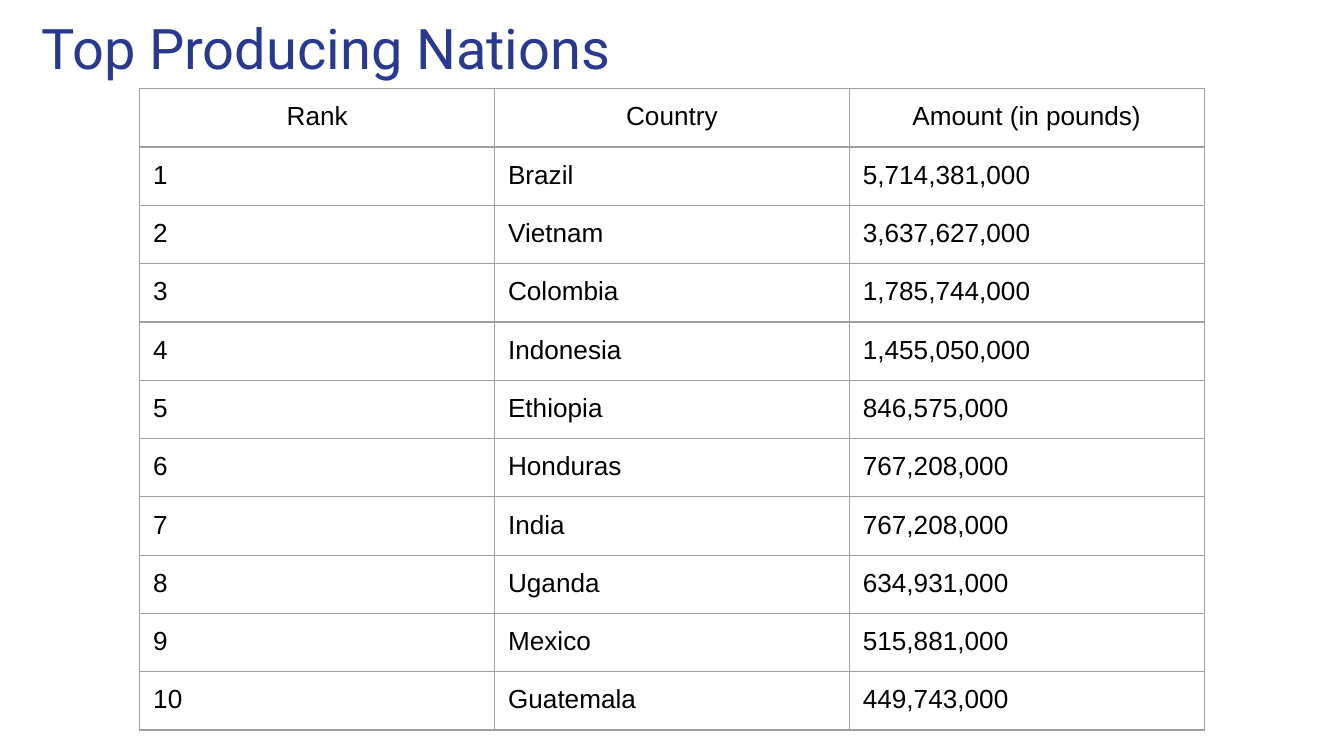
from lxml import etree
from pptx import Presentation, util as u
from pptx.dml.color import RGBColor
from pptx.enum import text
from pptx.oxml.ns import qn

COLORS = {"title": "2A3990", "body": "000000", "border": "9E9E9E"}
HEADERS = ("Rank", "Country", "Amount (in pounds)")
PRODUCERS = (
    ("Brazil", "5,714,381,000"),
    ("Vietnam", "3,637,627,000"),
    ("Colombia", "1,785,744,000"),
    ("Indonesia", "1,455,050,000"),
    ("Ethiopia", "846,575,000"),
    ("Honduras", "767,208,000"),
    ("India", "767,208,000"),
    ("Uganda", "634,931,000"),
    ("Mexico", "515,881,000"),
    ("Guatemala", "449,743,000"),
)


def write_text(holder, words, *, size, font, color, align=text.PP_ALIGN.LEFT):
    """Write one formatted paragraph with even margins into a cell or text frame."""
    holder.margin_left = holder.margin_right = u.Inches(0.1)
    holder.margin_top = holder.margin_bottom = u.Inches(0.1)
    holder.vertical_anchor = text.MSO_ANCHOR.TOP
    frame = getattr(holder, "text_frame", holder)
    paragraph = frame.paragraphs[0]
    paragraph.alignment = align
    run = paragraph.add_run()
    run.text = words
    run.font.size = u.Pt(size)
    run.font.name = font
    run.font.bold = False
    run.font.color.rgb = RGBColor.from_string(COLORS[color])


def add_title(slide, words):
    """Add the slide title."""
    box = slide.shapes.add_textbox(u.Inches(0.21), 0, u.Inches(9.32), u.Inches(0.66))
    box.text_frame.word_wrap = True
    write_text(box.text_frame, words, size=30, font="Roboto", color="title")


def outline_cell(cell):
    """Draw a thin border on all four sides of a cell."""
    properties = cell._tc.get_or_add_tcPr()
    for side in ("lnL", "lnR", "lnT", "lnB"):
        line = etree.SubElement(properties, qn(f"a:{side}"), w=str(u.Pt(0.75)))
        fill = etree.SubElement(line, qn("a:solidFill"))
        etree.SubElement(fill, qn("a:srgbClr"), val=COLORS["border"])


def add_grid(slide, rows):
    """Add a plain bordered table whose first row is centred."""
    side = u.Inches(3.28)
    frame = slide.shapes.add_table(
        len(rows), len(rows[0]), u.Inches(1.04), u.Inches(0.66), side, side
    )
    table = frame.table
    table.first_row = table.horz_banding = False
    for column in table.columns:
        column.width = u.Inches(2.64)
    for row in table.rows:
        row.height = u.Inches(5 / 12)
    frame.width = frame.height = side
    for row_index, row in enumerate(rows):
        align = text.PP_ALIGN.LEFT if row_index else text.PP_ALIGN.CENTER
        for column_index, words in enumerate(row):
            cell = table.cell(row_index, column_index)
            write_text(cell, words, size=14, font="Arial", color="body", align=align)
            outline_cell(cell)
            cell.fill.background()


def main():
    """Build and save the slide."""
    presentation = Presentation()
    presentation.slide_width = u.Inches(10)
    presentation.slide_height = u.Inches(10 * 9 / 16)
    slide = presentation.slides.add_slide(presentation.slide_layouts[6])
    add_title(slide, "Top Producing Nations")
    ranked = [(str(rank), *row) for rank, row in enumerate(PRODUCERS, 1)]
    add_grid(slide, [HEADERS, *ranked])
    presentation.save("out.pptx")


if __name__ == "__main__":
    main()
